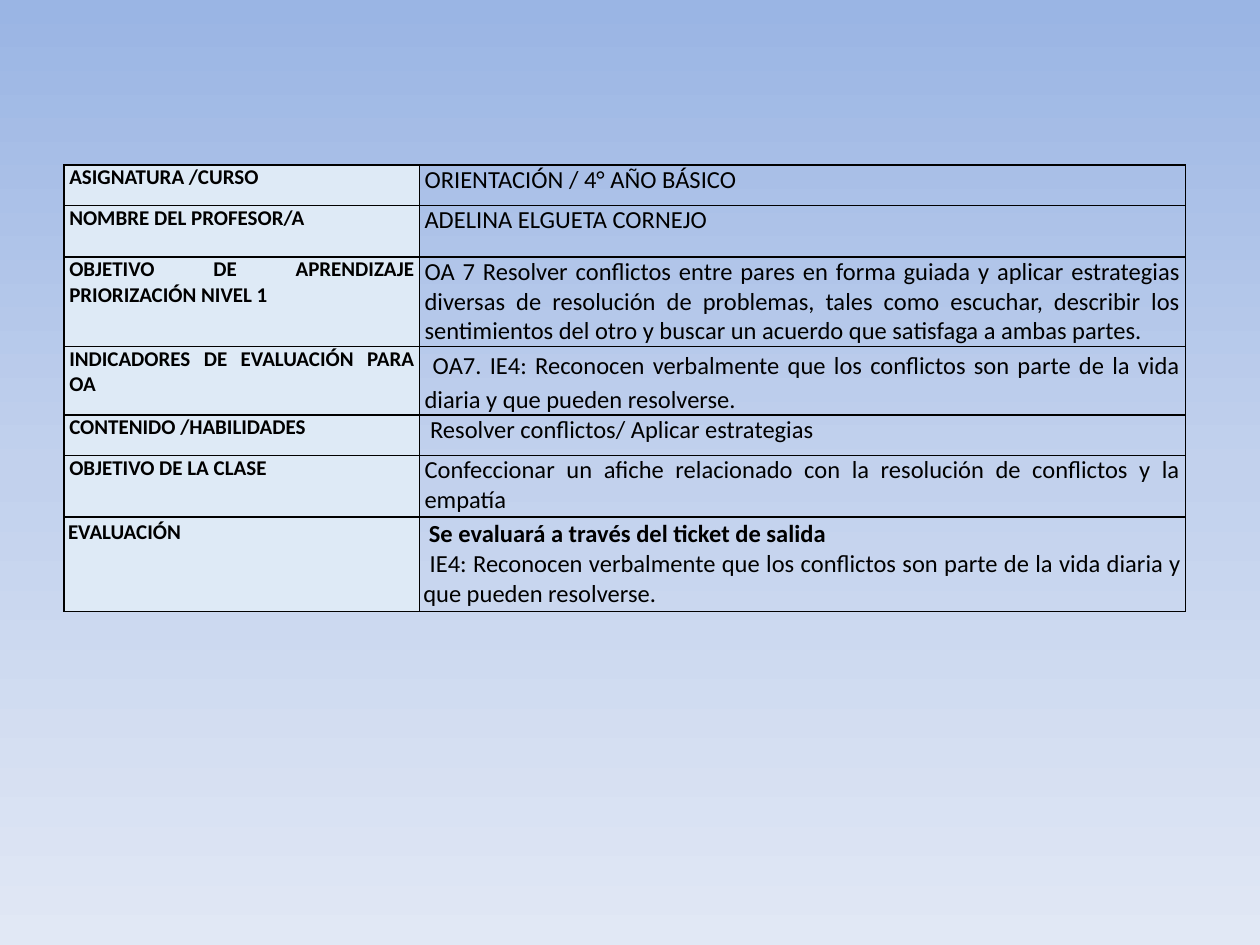
"""Build a lesson-plan slide with a two-column table on a gradient background."""
from copy import deepcopy

from lxml import etree
from pptx import Presentation
from pptx import util as u
from pptx.dml.color import RGBColor
from pptx.enum import text
from pptx.oxml.ns import qn

WIDTH, HEIGHT = 10, 7.5
BACKGROUND = [(0, "9AB5E4"), (0.5, "C2D1ED"), (1, "E1E8F5")]
LABEL_FILL, INK, FONT = "DEEAF6", "000000", "Calibri"
LABEL_SIZE, VALUE_SIZE = 12, 14
LEFT, TOP = 0.51, 1.31
COLUMNS = [2.82, 6.08]
INSETS, LAST_INSETS = (0.04, 0), (0.03, 0.02)

ROWS = [
    (0.32, "ASIGNATURA /CURSO", ["ORIENTACIÓN / 4° AÑO BÁSICO"]),
    (0.41, "NOMBRE DEL PROFESOR/A", ["ADELINA ELGUETA CORNEJO"]),
    (0.69, "OBJETIVO DE APRENDIZAJE PRIORIZACIÓN NIVEL 1", [
        "OA 7 Resolver conflictos entre pares en forma guiada y aplicar estrategias "
        "diversas de resolución de problemas, tales como escuchar, describir los "
        "sentimientos del otro y buscar un acuerdo que satisfaga a ambas partes. "]),
    (0.48, "INDICADORES DE EVALUACIÓN PARA OA", [
        " OA7. IE4: Reconocen verbalmente que los conflictos son parte de la vida "
        "diaria y que pueden resolverse."]),
    (0.32, "CONTENIDO /HABILIDADES", [" Resolver conflictos/ Aplicar estrategias"]),
    (0.49, "OBJETIVO DE LA CLASE", [
        "Confeccionar un afiche relacionado con la resolución de conflictos y la empatía "]),
    (0.63, "EVALUACIÓN", [
        " Se evaluará a través del ticket de salida",
        " IE4: Reconocen verbalmente que los conflictos son parte de la vida diaria "
        "y que pueden resolverse."]),
]
INDICATOR_ROW, LAST_ROW = 3, len(ROWS) - 1


def color(value):
    return RGBColor.from_string(value)


def paint_background(slide):
    fill = slide.background.fill
    fill.gradient()
    fill.gradient_angle = 270
    stop_list = slide._element.find(".//" + qn("a:gsLst"))
    stop_list.append(deepcopy(stop_list[-1]))
    for stop, (position, value) in zip(fill.gradient_stops, BACKGROUND):
        stop.position = position
        stop.color.rgb = color(value)


def add_borders(cell):
    properties = cell._tc.get_or_add_tcPr()
    for index, side in enumerate(("lnL", "lnR", "lnT", "lnB")):
        line = etree.Element(qn(f"a:{side}"), w=str(u.Pt(1)))
        solid = etree.SubElement(line, qn("a:solidFill"))
        etree.SubElement(solid, qn("a:srgbClr"), val=INK)
        properties.insert(index, line)


def write_cell(cell, lines, size, insets):
    cell.margin_left = cell.margin_right = u.Inches(insets[0])
    cell.margin_top = cell.margin_bottom = u.Inches(insets[1])
    cell.text = "\n".join(lines)
    for paragraph in cell.text_frame.paragraphs:
        paragraph.alignment = text.PP_ALIGN.JUSTIFY
        font = paragraph.font
        font.name, font.size, font.bold = FONT, u.Pt(size), size == LABEL_SIZE
        font.color.rgb = color(INK)
    add_borders(cell)


def add_plan(slide):
    heights = [height for height, _, _ in ROWS]
    frame = slide.shapes.add_table(
        len(ROWS), len(COLUMNS), u.Inches(LEFT), u.Inches(TOP),
        u.Inches(sum(COLUMNS)), u.Inches(sum(heights)))
    table = frame.table
    table.first_row = table.horz_banding = False
    for column, width in zip(table.columns, COLUMNS):
        column.width = u.Inches(width)
    for index, (height, label, lines) in enumerate(ROWS):
        table.rows[index].height = u.Inches(height)
        label_cell, value_cell = table.rows[index].cells
        insets = LAST_INSETS if index == LAST_ROW else INSETS
        write_cell(label_cell, [label], LABEL_SIZE, insets)
        write_cell(value_cell, lines, VALUE_SIZE, insets)
        label_cell.fill.solid()
        label_cell.fill.fore_color.rgb = color(LABEL_FILL)
        value_cell.fill.background()
    table.cell(INDICATOR_ROW, 1).text_frame.paragraphs[0].line_spacing = 1.15
    table.cell(LAST_ROW, 1).text_frame.paragraphs[0].font.bold = True


def main():
    presentation = Presentation()
    presentation.slide_width = u.Inches(WIDTH)
    presentation.slide_height = u.Inches(HEIGHT)
    slide = presentation.slides.add_slide(presentation.slide_layouts[6])
    paint_background(slide)
    add_plan(slide)
    presentation.save("out.pptx")


if __name__ == "__main__":
    main()
